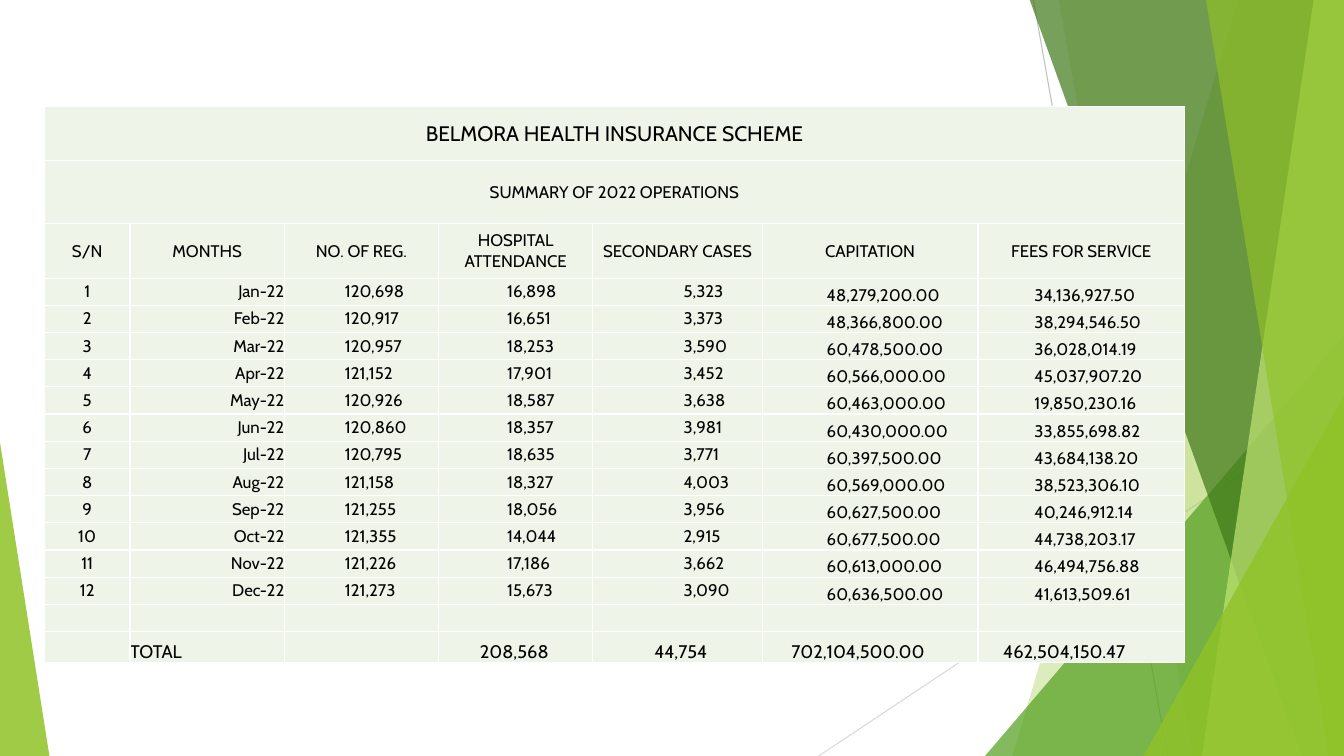
from dataclasses import dataclass

from lxml import etree
from pptx import Presentation
from pptx.dml.color import RGBColor
from pptx.enum.shapes import MSO_CONNECTOR, MSO_SHAPE
from pptx.enum.text import MSO_ANCHOR, PP_ALIGN
from pptx.oxml.ns import qn
from pptx.util import Inches, Pt

STRAIGHT = MSO_CONNECTOR.STRAIGHT
TRIANGLE = MSO_SHAPE.ISOSCELES_TRIANGLE
LEFT, CENTER, RIGHT = PP_ALIGN.LEFT, PP_ALIGN.CENTER, PP_ALIGN.RIGHT
MIDDLE, BOTTOM = MSO_ANCHOR.MIDDLE, MSO_ANCHOR.BOTTOM


@dataclass(frozen=True)
class Theme:
    font: str = "Cabin"
    text: str = "000000"
    cell: str = "EEF4E8"
    border: str = "FFFFFF"
    gray: str = "BFBFBF"
    light_gray: str = "D9D9D9"
    lime: str = "90C226"
    pale_lime: str = "C0E474"
    green: str = "54A021"
    dark_green: str = "3F7819"
    heading_size: float = 15
    body_size: float = 12
    total_size: float = 13
    line_width: float = 0.75
    border_width: float = 1


THEME = Theme()
SLIDE_WIDTH, SLIDE_HEIGHT = 13.33, 7.5
TOP = -0.01

COLUMN_WIDTHS = [0.85, 1.53, 1.53, 1.53, 1.68, 2.14, 2.05]
ROW_HEIGHTS = [0.53, 0.63, 0.54] + [0.27] * 13 + [0.31]
BANNERS = [
    ("BELMORA HEALTH INSURANCE SCHEME", THEME.heading_size),
    ("SUMMARY OF 2022 OPERATIONS", THEME.body_size),
]
HEADERS = ["S/N", "MONTHS", "NO. OF REG.", "HOSPITAL ATTENDANCE",
           "SECONDARY CASES", "CAPITATION", "FEES FOR SERVICE"]
MONTHS = [
    ("Jan-22", "120,698", "16,898", "5,323", "48,279,200.00", "34,136,927.50"),
    ("Feb-22", "120,917", "16,651", "3,373", "48,366,800.00", "38,294,546.50"),
    ("Mar-22", "120,957", "18,253", "3,590", "60,478,500.00", "36,028,014.19"),
    ("Apr-22", "121,152", "17,901", "3,452", "60,566,000.00", "45,037,907.20"),
    ("May-22", "120,926", "18,587", "3,638", "60,463,000.00", "19,850,230.16"),
    ("Jun-22", "120,860", "18,357", "3,981", "60,430,000.00", "33,855,698.82"),
    ("Jul-22", "120,795", "18,635", "3,771", "60,397,500.00", "43,684,138.20"),
    ("Aug-22", "121,158", "18,327", "4,003", "60,569,000.00", "38,523,306.10"),
    ("Sep-22", "121,255", "18,056", "3,956", "60,627,500.00", "40,246,912.14"),
    ("Oct-22", "121,355", "14,044", "2,915", "60,677,500.00", "44,738,203.17"),
    ("Nov-22", "121,226", "17,186", "3,662", "60,613,000.00", "46,494,756.88"),
    ("Dec-22", "121,273", "15,673", "3,090", "60,636,500.00", "41,613,509.61"),
]
TOTALS = ["", "TOTAL", "", "208,568", "44,754", "702,104,500.00", "462,504,150.47"]
MONTH_FORMATS = [
    {"align": CENTER},
    {"align": RIGHT},
    {"indent": 0.6},
    {"indent": 0.68},
    {"indent": 0.9},
    {"indent": 0.64, "anchor": BOTTOM},
    {"indent": 0.56, "anchor": BOTTOM},
]
TOTAL_INDENTS = [0, 0, 0, 0.41, 0.61, 0.29, 0.25]


def paint(shape, color, opacity):
    shape.shadow.inherit = False
    shape.line.fill.background()
    shape.fill.solid()
    shape.fill.fore_color.rgb = RGBColor.from_string(color)
    color_node = shape.fill._xPr.find(qn("a:solidFill"))[0]
    etree.SubElement(color_node, qn("a:alpha"), val=str(opacity * 1000))


def add_line(slide, start, end, color):
    points = [Inches(value) for value in (*start, *end)]
    line = slide.shapes.add_connector(STRAIGHT, *points)
    line.line.color.rgb = RGBColor.from_string(color)
    line.line.width = Pt(THEME.line_width)
    etree.SubElement(line._element.spPr, qn("a:effectLst"))


def add_panel(slide, top_left, bottom_left, color, opacity):
    outline = [(top_left, TOP), (SLIDE_WIDTH, TOP),
               (SLIDE_WIDTH, SLIDE_HEIGHT), (bottom_left, SLIDE_HEIGHT)]
    points = [(Inches(x), Inches(y)) for x, y in outline]
    builder = slide.shapes.build_freeform(*points[0])
    builder.add_line_segments(points[1:], close=True)
    paint(builder.convert_to_shape(), color, opacity)


def add_triangle(slide, left, top, width, apex, color, opacity):
    shape = slide.shapes.add_shape(TRIANGLE, Inches(left), Inches(top),
                                   Inches(width), Inches(SLIDE_HEIGHT - top))
    shape.adjustments[0] = apex
    paint(shape, color, opacity)


def add_decoration(slide):
    add_line(slide, (10.25, 0), (11.58, SLIDE_HEIGHT), THEME.gray)
    add_line(slide, (SLIDE_WIDTH, 4.03), (8.12, SLIDE_HEIGHT), THEME.light_gray)
    add_panel(slide, 12.28, 10.04, THEME.lime, 30)
    add_panel(slide, 10.5, 11.83, THEME.lime, 20)
    add_triangle(slide, 9.77, 3.33, 3.56, 1, THEME.green, 72)
    add_panel(slide, 10.21, 12.91, THEME.dark_green, 70)
    add_panel(slide, 13.03, 11.92, THEME.pale_lime, 70)
    add_panel(slide, 11.96, 13.18, THEME.lime, 65)
    add_triangle(slide, 11.34, 3.93, 1.99, 1, THEME.lime, 80)
    add_triangle(slide, 0, 4.39, 0.49, 0, THEME.lime, 85)


def format_cell(cell):
    properties = cell._tc.get_or_add_tcPr()
    for side in ("lnL", "lnR", "lnT", "lnB"):
        border = etree.SubElement(properties, qn(f"a:{side}"),
                                  w=str(Pt(THEME.border_width)))
        fill = etree.SubElement(border, qn("a:solidFill"))
        etree.SubElement(fill, qn("a:srgbClr"), val=THEME.border)
    cell.fill.solid()
    cell.fill.fore_color.rgb = RGBColor.from_string(THEME.cell)


def write_text(cell, text, size=THEME.body_size, align=LEFT, anchor=MIDDLE, indent=0):
    cell.margin_left = Inches(indent)
    cell.margin_right = cell.margin_top = cell.margin_bottom = 0
    cell.vertical_anchor = anchor
    paragraph = cell.text_frame.paragraphs[0]
    paragraph.alignment = align
    if not text:
        paragraph._p.get_or_add_endParaRPr().set("sz", str(size * 100))
        return
    run = paragraph.add_run()
    run.text = text
    run.font.name = THEME.font
    run.font.size = Pt(size)
    run.font.color.rgb = RGBColor.from_string(THEME.text)


def add_summary_table(slide):
    frame = slide.shapes.add_table(
        len(ROW_HEIGHTS), len(COLUMN_WIDTHS), Inches(0.44), Inches(1.06),
        Inches(sum(COLUMN_WIDTHS)), Inches(sum(ROW_HEIGHTS)))
    table = frame.table
    table.first_row = table.horz_banding = False
    for column, width in zip(table.columns, COLUMN_WIDTHS):
        column.width = Inches(width)
    for row, height in zip(table.rows, ROW_HEIGHTS):
        row.height = Inches(height)
    for cell in table.iter_cells():
        format_cell(cell)

    last_column = len(COLUMN_WIDTHS) - 1
    for row, (text, size) in enumerate(BANNERS):
        table.cell(row, 0).merge(table.cell(row, last_column))
        write_text(table.cell(row, 0), text, size=size, align=CENTER)
    header_row = len(BANNERS)
    for column, text in enumerate(HEADERS):
        write_text(table.cell(header_row, column), text, align=CENTER)
    for number, values in enumerate(MONTHS, 1):
        for column, text in enumerate((str(number), *values)):
            write_text(table.cell(header_row + number, column), text,
                       **MONTH_FORMATS[column])
    total_row = len(ROW_HEIGHTS) - 1
    for column, (text, indent) in enumerate(zip(TOTALS, TOTAL_INDENTS)):
        write_text(table.cell(total_row - 1, column), "")
        write_text(table.cell(total_row, column), text, size=THEME.total_size,
                   anchor=BOTTOM, indent=indent)


def main():
    presentation = Presentation()
    presentation.slide_width = Inches(SLIDE_WIDTH)
    presentation.slide_height = Inches(SLIDE_HEIGHT)
    slide = presentation.slides.add_slide(presentation.slide_layouts[6])
    add_decoration(slide)
    add_summary_table(slide)
    presentation.save("out.pptx")


if __name__ == "__main__":
    main()
